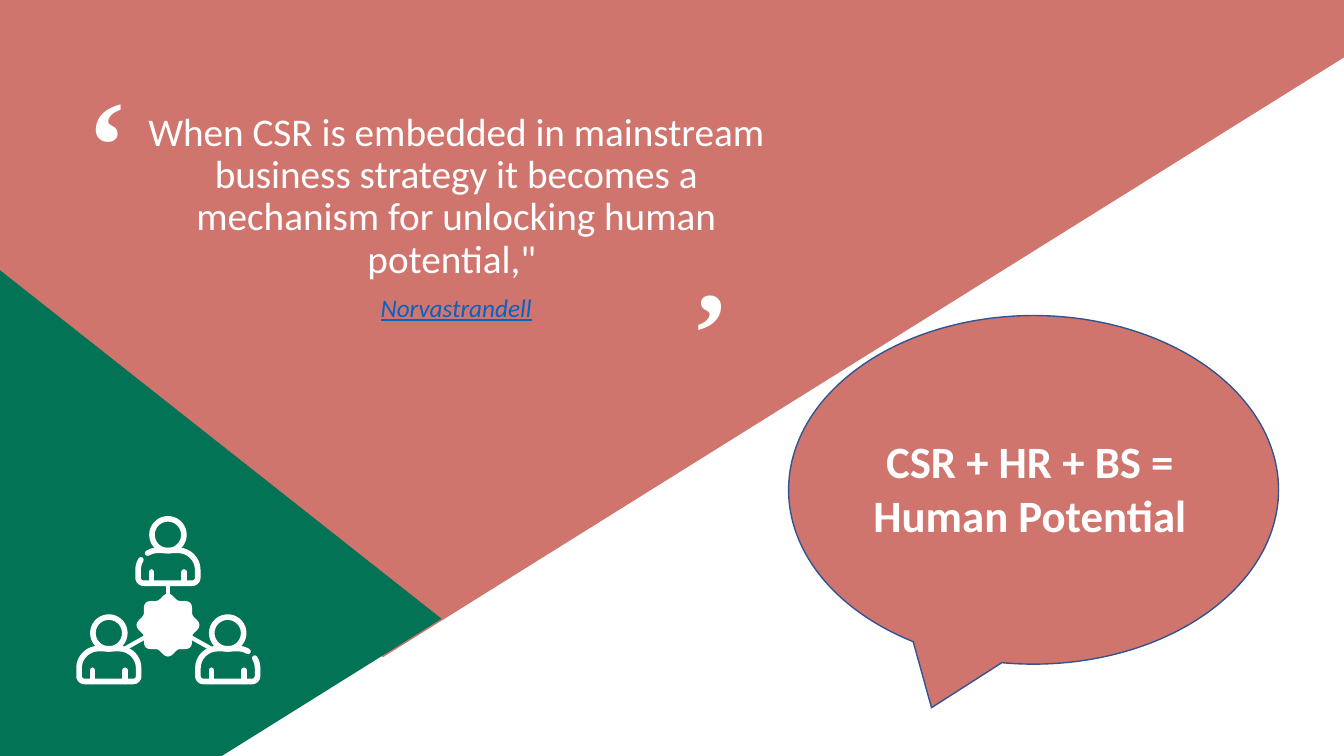
"""Build the quote slide with its speech bubble and team icon."""
import math
from dataclasses import dataclass
from typing import Any, Optional

import lxml.etree
import pptx
import pptx.dml.color
import pptx.enum.shapes
import pptx.enum.text
import pptx.oxml.ns
import pptx.util

Pt = pptx.util.Pt
MSO_SHAPE = pptx.enum.shapes.MSO_SHAPE
ALIGN = pptx.enum.text.PP_ALIGN
ANCHOR = pptx.enum.text.MSO_ANCHOR
qn = pptx.oxml.ns.qn

CORAL, GREEN, WHITE, NAVY, LINK = "D0756E", "027354", "FFFFFF", "325491", "0563C1"
STROKE = 4
GEAR_X, GEAR_Y = 120, 446.5


@dataclass
class Contour:
    points: list
    closed: bool = True


@dataclass
class Person:
    x: float
    top: float
    gap_side: int


@dataclass
class QuoteMark:
    box: tuple[float, float, float, float]
    size: float
    spacing: float
    align: Any
    rotation: float


@dataclass
class Link:
    start: tuple[float, float]
    end: tuple[float, float]


BANDS = [
    ([(0, 0), (960, 0), (960, 41), (273.6, 469.4), (0, 290.9)], CORAL),
    ([(0, 193), (315.4, 442), (158.4, 540), (0, 540)], GREEN),
]
PEOPLE = [Person(120, 368.6, -1), Person(77.8, 438.8, 0), Person(162.7, 438.8, 1)]
LINKS = [
    Link((120, 417), (120, 428)),
    Link((88, 464), (104, 455)),
    Link((152, 464), (136, 455)),
]
MARKS = [
    QuoteMark((487.4, 157, 61.9, 83.5), 81.6, 0.7, ALIGN.RIGHT, 180),
    QuoteMark((54.7, 61.9, 205.9, 96.5), 88.8, 0.8, ALIGN.LEFT, 0),
]


def rgb(color: str) -> pptx.dml.color.RGBColor:
    return pptx.dml.color.RGBColor.from_string(color)


def paint(sp: Any, fill: Optional[str] = None, line: Optional[str] = None,
          width: float = 1) -> Any:
    sp.shadow.inherit = False
    if fill:
        sp.fill.solid()
        sp.fill.fore_color.rgb = rgb(fill)
    else:
        sp.fill.background()
    if line:
        sp.line.color.rgb = rgb(line)
        sp.line.width = Pt(width)
    else:
        sp.line.fill.background()
    return sp


def outline(parent: Any, contours: list[Contour]) -> Any:
    builder = None
    for contour in contours:
        pts = [(Pt(x), Pt(y)) for x, y in contour.points]
        if builder is None:
            builder = parent.shapes.build_freeform(*pts[0])
        else:
            builder.move_to(*pts[0])
        builder.add_line_segments(pts[1:], close=contour.closed)
    return builder.convert_to_shape()


def arc(cx: float, cy: float, radius: float, first: float, last: float, steps: int) -> list:
    angles = [math.radians(first + (last - first) * i / steps) for i in range(steps + 1)]
    return [(cx + radius * math.cos(a), cy + radius * math.sin(a)) for a in angles]


def place(sp: Any, box: tuple, anchor: Any) -> Any:
    sp.left, sp.top, sp.width, sp.height = map(Pt, box)
    tf = sp.text_frame
    tf.word_wrap = True
    tf.auto_size = pptx.enum.text.MSO_AUTO_SIZE.NONE
    tf.vertical_anchor = anchor
    return tf


def write(p: Any, text: str, *, size: float, color: str = WHITE, font: str = "Calibri",
          bold: bool = False, italic: bool = False, underline: bool = False,
          align: Any = ALIGN.CENTER, spacing: float = 1, before: float = 0) -> None:
    p.alignment, p.line_spacing, p.space_before = align, spacing, Pt(before)
    r = p.add_run()
    r.text = text
    r.font.name, r.font.size, r.font.color.rgb = font, Pt(size), rgb(color)
    r.font.bold, r.font.italic, r.font.underline = bold, italic, underline


def no_bullet(p: Any) -> None:
    props = p._p.get_or_add_pPr()
    props.set("marL", "0")
    props.set("indent", "0")
    lxml.etree.SubElement(props, qn("a:buNone"))


def draw_link(parent: Any, link: Link) -> None:
    ends = [Pt(v) for v in link.start + link.end]
    line = parent.shapes.add_connector(pptx.enum.shapes.MSO_CONNECTOR.STRAIGHT, *ends)
    line.line.color.rgb = rgb(WHITE)
    line.line.width = Pt(3)
    lxml.etree.SubElement(line._element.spPr, qn("a:effectLst"))


def person_contours(person: Person) -> list[Contour]:
    half, top, bottom = 21.3, person.top + 24.5, person.top + 48
    gap = 14 if person.gap_side else 0
    flip = person.gap_side or -1
    corners = [(-1, 1, 14, 225 + gap, 270), (1, 1, 14, 270, 360), (1, -1, 4, 0, 90),
               (-1, -1, 4, 90, 180), (-1, 1, 14, 180, 225 - gap)]
    torso = []
    for side, down, radius, first, last in corners:
        cy = (top if down > 0 else bottom) + down * radius
        torso += arc(side * (half - radius), cy, radius, first, last, 8)
    torso = [(person.x - flip * x, y) for x, y in torso]
    arms = [Contour([(person.x + dx, person.top + 40), (person.x + dx, bottom)], False)
            for dx in (-11.7, 11.7)]
    head = Contour(arc(person.x, person.top + 13.4, 11.4, 0, 350, 35))
    return [head, Contour(torso, not gap), *arms]


def draw_team(s: Any) -> None:
    team = s.shapes.add_group_shape()
    gear = []
    for degree in range(0, 360, 5):
        radius = 20.7 + 1.8 * math.cos(math.radians(8 * degree))
        gear += arc(GEAR_X, GEAR_Y, radius, degree, degree, 1)[:1]
    paint(outline(team, [Contour(gear)]), fill=WHITE)
    for link in LINKS:
        draw_link(team, link)
    contours = [c for person in PEOPLE for c in person_contours(person)]
    people = paint(outline(team, contours), line=WHITE, width=STROKE)
    people._element.spPr.find(qn("a:ln")).set("cap", "rnd")


def main() -> None:
    prs = pptx.Presentation()
    prs.slide_width, prs.slide_height = Pt(960), Pt(540)
    s = prs.slides.add_slide(prs.slide_layouts[1])
    title, body = s.shapes.title, s.placeholders[1]

    for points, color in BANDS:
        paint(outline(s, [Contour(points)]), fill=color)
    bubble = s.shapes.add_shape(MSO_SHAPE.OVAL_CALLOUT, Pt(563.3), Pt(225.4), Pt(350), Pt(249))
    paint(bubble, fill=CORAL, line=NAVY)

    for mark in MARKS:
        sp = s.shapes.add_textbox(0, 0, 0, 0)
        tf = place(sp, mark.box, ANCHOR.TOP)
        sp.rotation = mark.rotation
        write(tf.paragraphs[0], "‘", size=mark.size, font="Times New Roman", bold=True,
              align=mark.align, spacing=mark.spacing, before=10)

    for sp in (body, title):
        s.shapes._spTree.append(sp._element)
    tf = place(body, (88.6, 0, 474.5, 311), ANCHOR.MIDDLE)
    quote, author = tf.paragraphs[0], tf.add_paragraph()
    write(quote, "When CSR is embedded in mainstream business strategy it becomes a "
          "mechanism for unlocking human potential,\" ", size=28, spacing=0.9, before=10)
    write(author, "Norvastrandell", size=18, color=LINK, italic=True, underline=True,
          spacing=0.9, before=10)
    for p in (quote, author):
        no_bullet(p)
    tf = place(title, (577, 306.4, 317.5, 85), ANCHOR.TOP)
    write(tf.paragraphs[0], "CSR + HR + BS = Human Potential", size=32, bold=True)

    draw_team(s)
    prs.save("out.pptx")


if __name__ == "__main__":
    main()
